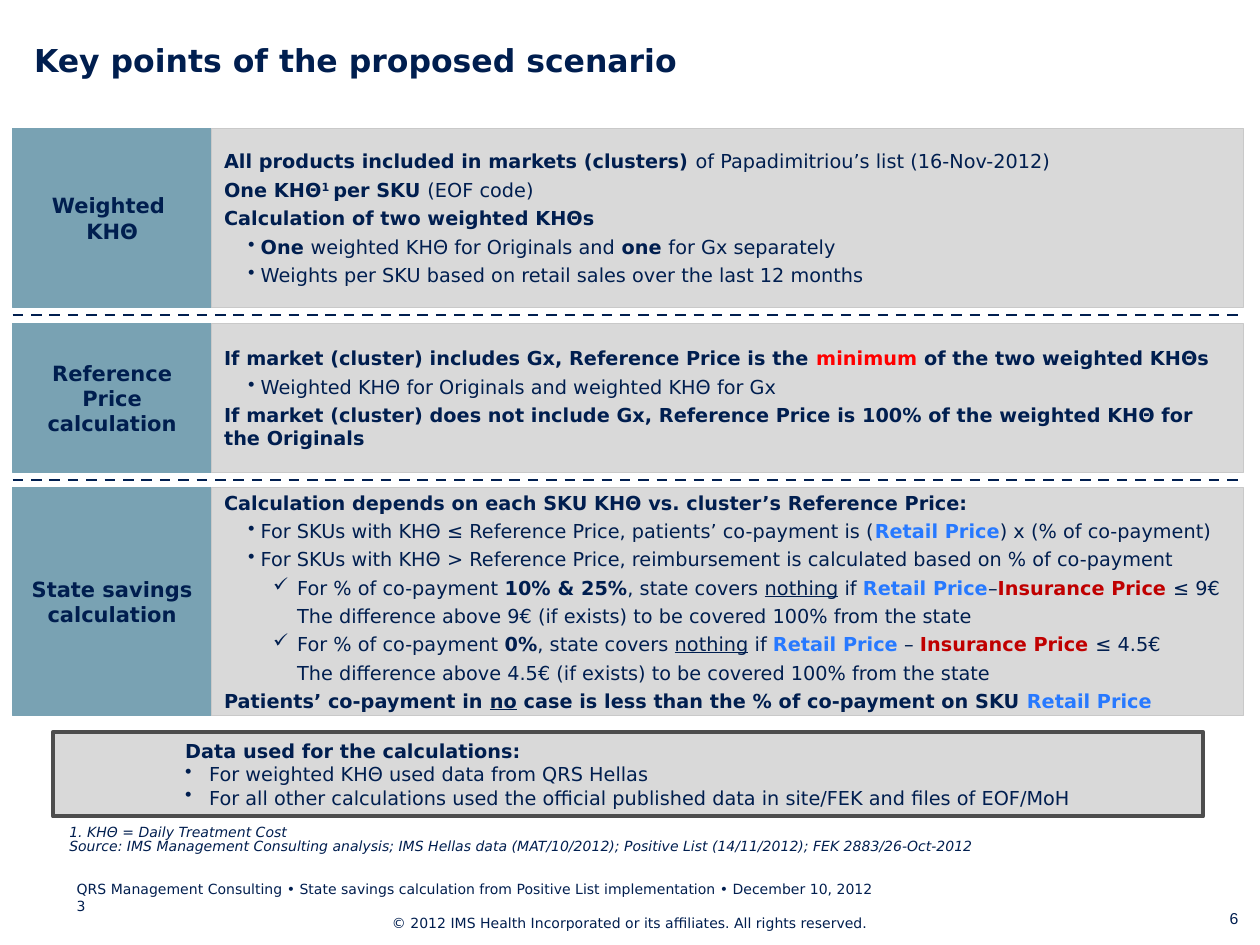
from dataclasses import dataclass
from typing import Any

import lxml.etree
import pptx
import pptx.dml.color
import pptx.enum.dml
import pptx.enum.shapes
import pptx.enum.text
import pptx.oxml.ns
import pptx.util

PX = 9144  # EMU per px, 100 px to the inch
FONT = "DejaVu Sans"
COLORS = {
    "navy": "001E4F", "teal": "79A2B3", "grey": "D9D9D9", "edge": "C9C9C9",
    "dark": "4D4D4D", "red": "FF0000", "blue": "2779FF", "wine": "C00000",
}
ALIGN = pptx.enum.text.PP_ALIGN
ANCHOR = pptx.enum.text.MSO_ANCHOR
RECT = pptx.enum.shapes.MSO_SHAPE.RECTANGLE
qn = pptx.oxml.ns.qn


@dataclass
class Run:
    text: str
    bold: bool = False
    color: str = "navy"
    under: bool = False
    sup: bool = False


@dataclass
class Para:
    runs: list[Run]
    left: int = 0
    hang: int = 0
    mark: str = ""
    align: Any = ALIGN.LEFT


@dataclass
class Band:
    top: int
    high: int
    label: list[str]
    paras: list[Para]


def px(n: int) -> pptx.util.Emu:
    return pptx.util.Emu(n * PX)


def rgb(name: str) -> pptx.dml.color.RGBColor:
    return pptx.dml.color.RGBColor.from_string(COLORS[name])


def bold(text: str, color: str = "navy", **kw) -> Run:
    return Run(text, True, color, **kw)


def item(*runs: Run) -> Para:
    return Para(list(runs), 29, 10, "•")


def check(*runs: Run) -> Para:
    return Para(list(runs), 58, 19, "✓")


def plain(text: str, **kw) -> Para:
    return Para([Run(text)], **kw)


def write(shape, paras: list[Para], *, size: int = 11, font: str = FONT, gap: int = 0,
          lead: float = 1.0, italic: bool = False, anchor=ANCHOR.MIDDLE,
          inset: tuple[int, int, int, int] = (0, 0, 0, 0), wrap: bool = True) -> None:
    """Fill a shape with paragraphs; inset is left, top, right, bottom."""
    frame = shape.text_frame
    frame.word_wrap = wrap
    frame.auto_size = pptx.enum.text.MSO_AUTO_SIZE.NONE
    frame.vertical_anchor = anchor
    (frame.margin_left, frame.margin_top,
     frame.margin_right, frame.margin_bottom) = map(px, inset)
    for n, para in enumerate(paras):
        p = frame.add_paragraph() if n else frame.paragraphs[0]
        p.alignment = para.align
        p.line_spacing = lead
        p.space_before = pptx.util.Pt(gap if n else 0)
        props = p._p.get_or_add_pPr()
        props.set("marL", str(px(para.left)))
        props.set("indent", str(px(-para.hang)))
        if para.mark:
            lxml.etree.SubElement(props, qn("a:buChar")).set("char", para.mark)
        else:
            lxml.etree.SubElement(props, qn("a:buNone"))
        for part in para.runs:
            run = p.add_run()
            run.text = part.text
            run.font.name, run.font.size = font, pptx.util.Pt(size)
            run.font.bold, run.font.italic = part.bold, italic
            run.font.underline = part.under
            run.font.color.rgb = rgb(part.color)
            if part.sup:
                run._r.get_or_add_rPr().set("baseline", "30000")


def box(slide, x: int, y: int, w: int, h: int, fill: str, edge: str, width: float = 0.75):
    shape = slide.shapes.add_shape(RECT, px(x), px(y), px(w), px(h))
    shape.shadow.inherit = False
    shape.fill.solid()
    shape.fill.fore_color.rgb = rgb(fill)
    shape.line.color.rgb = rgb(edge)
    shape.line.width = pptx.util.Pt(width)
    return shape


def note(slide, x: int, y: int, w: int, h: int, paras: list[Para], **form) -> None:
    write(slide.shapes.add_textbox(px(x), px(y), px(w), px(h)), paras, **form)


def rule(slide, y: int) -> None:
    line = slide.shapes.add_connector(
        pptx.enum.shapes.MSO_CONNECTOR.STRAIGHT, px(10), px(y), px(984), px(y))
    line.line.color.rgb = rgb("navy")
    line.line.width = pptx.util.Pt(1.5)
    line.line.dash_style = pptx.enum.dml.MSO_LINE.DASH
    lxml.etree.SubElement(line._element.spPr, qn("a:effectLst"))


def draw(slide, band: Band) -> None:
    inset = (10, 4, 10, 4)
    label = box(slide, 10, band.top, 158, band.high, "teal", "teal")
    write(label, [Para([bold(t)], align=ALIGN.CENTER) for t in band.label],
          size=12, inset=inset)
    panel = box(slide, 168, band.top, 819, band.high, "grey", "edge")
    write(panel, band.paras, gap=3, inset=inset)


def cover(share: str, dash: str, limit: str) -> list[Para]:
    """The rule for one co-payment share and the line that explains it."""
    return [
        check(Run("For % of co-payment "), bold(share), Run(", state covers "),
              Run("nothing", under=True), Run(" if "), bold("Retail Price", "blue"),
              Run(dash), bold("Insurance Price ", "wine"), Run(f"≤ {limit}")),
        plain(f"The difference above {limit} (if exists) to be covered 100% from the state",
              left=58),
    ]


BANDS = [
    Band(102, 142, ["Weighted ", "ΚΗΘ"], [
        Para([bold("All products included in markets (clusters) "),
              Run("of Papadimitriou’s list (16-Nov-2012)")]),
        Para([bold("One ΚΗΘ"), bold("1 ", sup=True), bold("per SKU "), Run("(EOF code)")]),
        Para([bold("Calculation of two weighted ΚΗΘs")]),
        item(bold("One "), Run("weighted ΚΗΘ for Originals and "),
             bold("one "), Run("for Gx separately")),
        item(Run("Weights per SKU based on retail sales over the last 12 months")),
    ]),
    Band(257, 118, ["Reference Price calculation"], [
        Para([bold("If market (cluster) includes Gx, Reference Price is the "),
              bold("minimum", "red"), bold(" of the two weighted ΚΗΘs")]),
        item(Run("Weighted ΚΗΘ for Originals and weighted ΚΗΘ for Gx")),
        Para([bold("If market (cluster) does not include Gx, Reference Price is 100% "
                   "of the weighted ΚΗΘ for the Originals")]),
    ]),
    Band(387, 181, ["State savings calculation"], [
        Para([bold("Calculation depends on each SKU ΚΗΘ vs. cluster’s Reference Price:")]),
        item(Run("For SKUs with ΚΗΘ ≤ Reference Price, patients’ co-payment is ("),
             bold("Retail Price", "blue"), Run(") x (% of co-payment)")),
        item(Run("For SKUs with ΚΗΘ > Reference Price, reimbursement is calculated "
                 "based on % of co-payment")),
        *cover("10% & 25%", "–", "9€"),
        *cover("0%", " – ", "4.5€"),
        Para([bold("Patients’ co-payment in "), bold("no", under=True),
              bold(" case is less than the % of co-payment on SKU "),
              bold("Retail Price", "blue")]),
    ]),
]


def main() -> None:
    deck = pptx.Presentation()
    deck.slide_width, deck.slide_height = px(1000), px(750)
    slide = deck.slides.add_slide(deck.slide_layouts[5])

    title = slide.shapes.title
    title.left, title.top, title.width, title.height = map(px, (27, 36, 963, 71))
    write(title, [Para([bold("Key points of the proposed scenario")])],
          size=18, lead=0.9, anchor=ANCHOR.TOP)

    for band in BANDS:
        draw(slide, band)
    for y in (250, 381):
        rule(slide, y)

    data = box(slide, 42, 581, 913, 67, "grey", "dark", 2.25)
    write(data, [
        Para([bold("Data used for the calculations:")]),
        plain("For weighted ΚΗΘ used data from QRS Hellas", left=19, hang=19, mark="•"),
        plain("For all other calculations used the official published data in site/FEK "
              "and files of EOF/MoH", left=19, hang=19, mark="•"),
    ], inset=(105, 5, 10, 5))

    note(slide, 55, 655, 944, 23, [
        plain("1. ΚΗΘ = Daily Treatment Cost"),
        plain("Source: IMS Management Consulting analysis; IMS Hellas data (MAT/10/2012); "
              "Positive List (14/11/2012); FEK 2883/26-Οct-2012"),
    ], size=8, lead=0.85, italic=True, anchor=ANCHOR.BOTTOM)
    note(slide, 51, 694, 898, 50, [
        plain("QRS Management Consulting • State savings calculation from Positive List "
              "implementation • December 10, 2012"),
        plain("3"),
        plain("© 2012 IMS Health Incorporated or its affiliates. All rights reserved.",
              align=ALIGN.CENTER),
    ], size=8, anchor=ANCHOR.TOP, inset=(10, 5, 10, 5))
    note(slide, 966, 716, 27, 25, [plain("6", align=ALIGN.CENTER)], size=9, font="Arial",
         anchor=ANCHOR.TOP, inset=(10, 5, 10, 5), wrap=False)

    deck.save("out.pptx")


if __name__ == "__main__":
    main()
